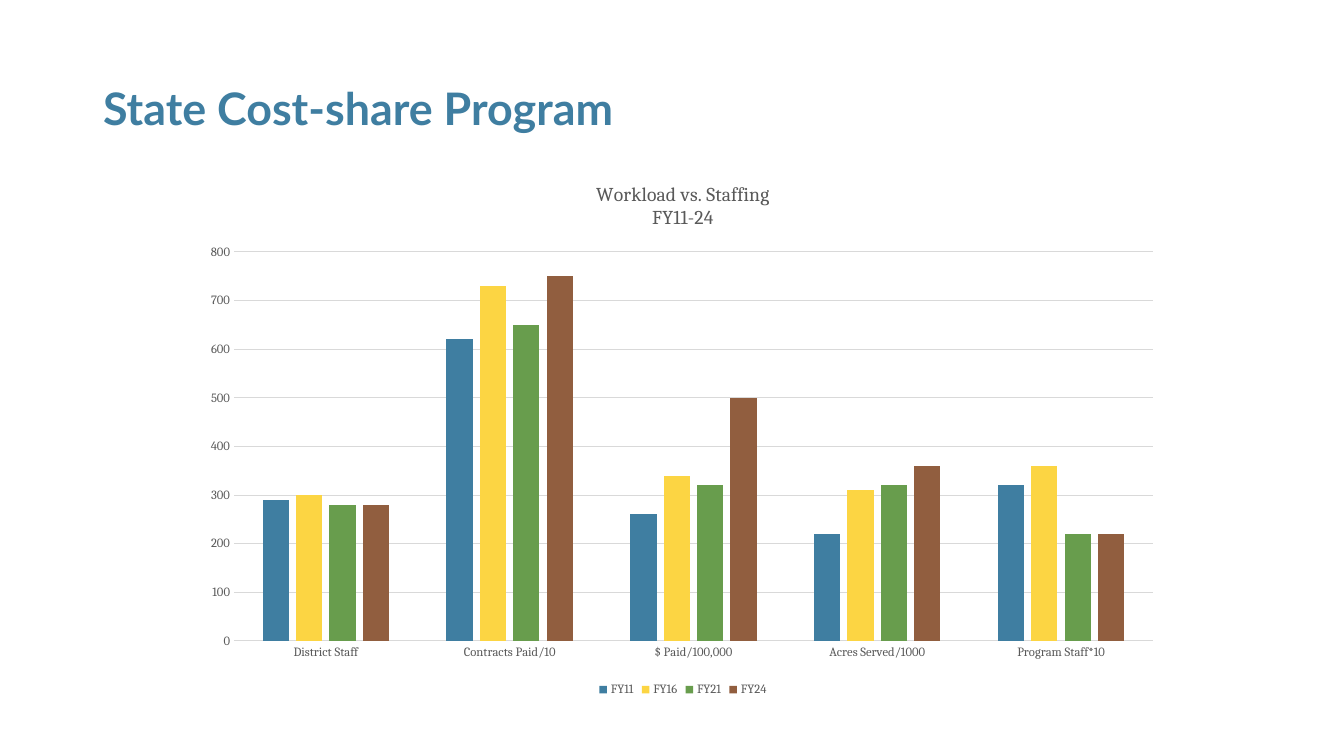
from lxml import etree
from pptx import Presentation
from pptx import util as u
from pptx.chart.data import CategoryChartData
from pptx.dml.color import RGBColor
from pptx.enum import chart as ch, text
from pptx.oxml.ns import qn

BLUE = RGBColor(0x3F, 0x7E, 0xA1)
YELLOW = RGBColor(0xFC, 0xD5, 0x43)
GREEN = RGBColor(0x68, 0x9D, 0x4D)
BROWN = RGBColor(0x91, 0x5E, 0x3F)
GRAY = RGBColor(0x59, 0x59, 0x59)
RULE = RGBColor(0xD9, 0xD9, 0xD9)
BLACK = RGBColor(0, 0, 0)


def px(n):
    return u.Emu(round(n * 914400 / 100.8))


def set_font(font, size, color, name="Cambria", bold=False):
    font.size = u.Pt(size)
    font.name = name
    font.bold = bold
    font.color.rgb = color


prs = Presentation()
prs.slide_width, prs.slide_height = px(1344), px(756)
s = prs.slides.add_slide(prs.slide_layouts[5])

title = s.shapes.title
title.left, title.top, title.width, title.height = px(93), px(40), px(1159), px(100)
tf = title.text_frame
tf.word_wrap = True
tf.vertical_anchor = text.MSO_ANCHOR.BOTTOM
p = tf.paragraphs[0]
p.alignment = text.PP_ALIGN.LEFT
p.line_spacing = 0.9
r = p.add_run()
r.text = "State Cost-share Program"
set_font(r.font, 32, BLUE, "Lato", True)

years = [
    ("FY11", BLUE, (290, 620, 260, 220, 320)),
    ("FY16", YELLOW, (300, 730, 340, 310, 360)),
    ("FY21", GREEN, (280, 650, 320, 320, 220)),
    ("FY24", BROWN, (280, 750, 500, 360, 220)),
]
data = CategoryChartData()
data.categories = ["District Staff", "Contracts Paid/10", "$ Paid/100,000",
                   "Acres Served/1000", "Program Staff*10"]
for name, color, values in years:
    data.add_series(name, values)

chart = s.shapes.add_chart(ch.XL_CHART_TYPE.COLUMN_CLUSTERED,
                           px(192), px(162), px(982), px(539), data).chart
set_font(chart.font, 10, BLACK)

chart.has_title = True
chart.chart_title.include_in_layout = False
tf = chart.chart_title.text_frame
for i, line in enumerate(["Workload vs. Staffing", "FY11-24"]):
    p = tf.add_paragraph() if i else tf.paragraphs[0]
    set_font(p.font, 14, GRAY)
    r = p.add_run()
    r.text = line
    set_font(r.font, 14, GRAY)

chart.has_legend = True
chart.legend.position = ch.XL_LEGEND_POSITION.BOTTOM
chart.legend.include_in_layout = False
set_font(chart.legend.font, 9, GRAY)

plot = chart.plots[0]
plot.gap_width = 219
plot.overlap = -27
plot.vary_by_categories = False
for series, (name, color, values) in zip(plot.series, years):
    series.format.fill.solid()
    series.format.fill.fore_color.rgb = color
    series.invert_if_negative = False

for axis in (chart.category_axis, chart.value_axis):
    axis.major_tick_mark = ch.XL_TICK_MARK.NONE
    axis.minor_tick_mark = ch.XL_TICK_MARK.NONE
    set_font(axis.tick_labels.font, 9, GRAY)

val = chart.value_axis
val.minimum_scale, val.maximum_scale, val.major_unit = 0, 800, 100
val.format.line.fill.background()
val.has_major_gridlines = True
for line in (chart.category_axis.format.line, val.major_gridlines.format.line):
    line.color.rgb = RULE
    line.width = u.Pt(0.75)

area = chart.element.find(".//" + qn("c:plotArea"))
for old in area.findall(qn("c:layout")):
    area.remove(old)
layout = etree.Element(qn("c:layout"))
area.insert(0, layout)
manual = etree.SubElement(layout, qn("c:manualLayout"))
for tag, value in [("layoutTarget", "inner"), ("xMode", "edge"), ("yMode", "edge"),
                   ("x", 42 / 982), ("y", 90 / 539), ("w", 919 / 982), ("h", 389 / 539)]:
    etree.SubElement(manual, qn("c:" + tag)).set("val", str(value))

prs.save("out.pptx")
